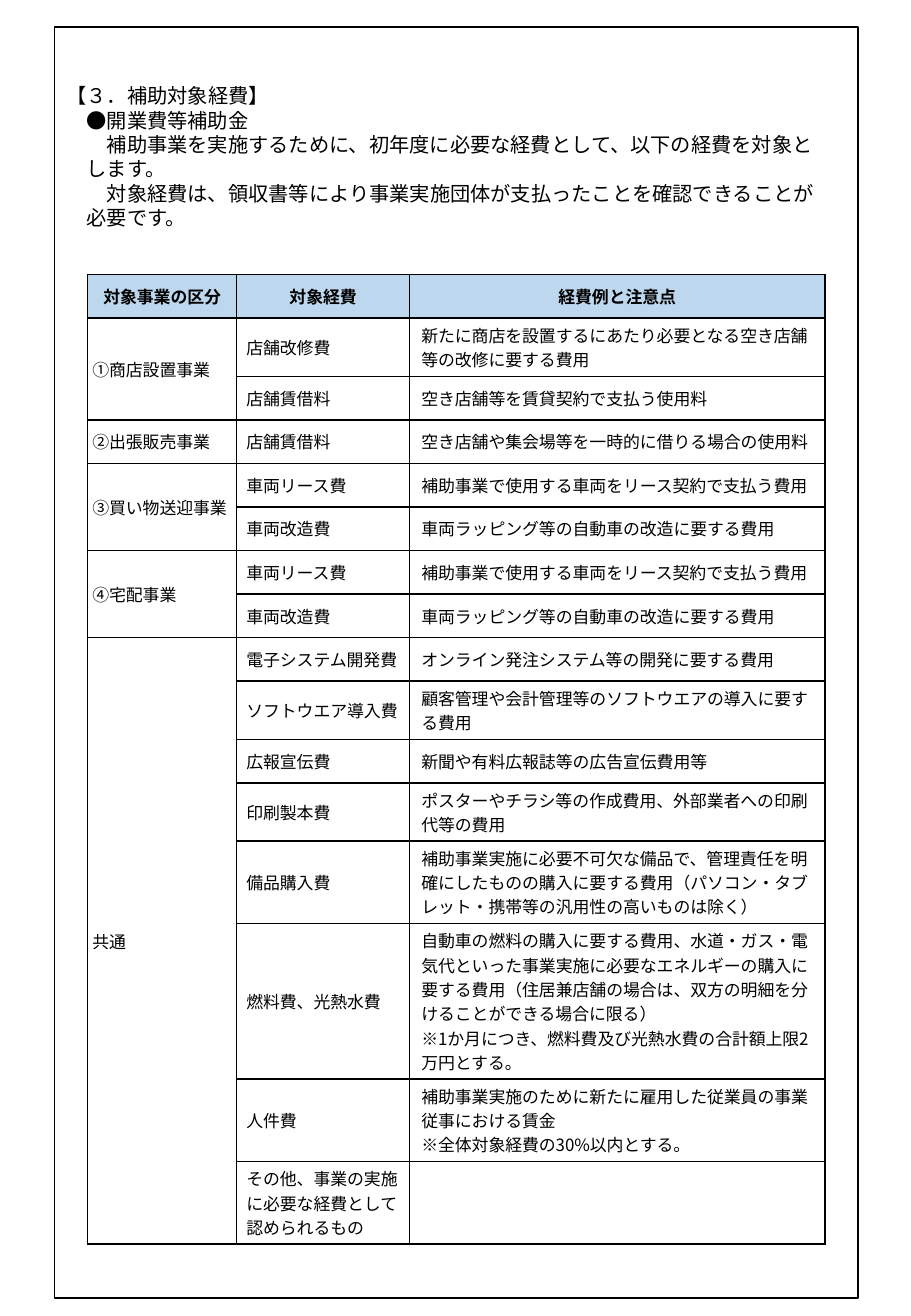
from lxml import etree
from pptx import Presentation
from pptx.dml.color import RGBColor
from pptx.enum.lang import MSO_LANGUAGE_ID
from pptx.enum.shapes import MSO_SHAPE
from pptx.enum.text import MSO_ANCHOR, MSO_AUTO_SIZE, PP_ALIGN
from pptx.oxml.ns import qn
from pptx.util import Cm, Pt

BLACK = RGBColor(0x00, 0x00, 0x00)
WHITE = RGBColor(0xFF, 0xFF, 0xFF)
HEADER_BLUE = RGBColor(0xBD, 0xD7, 0xEE)
FONT = "Noto Sans CJK JP"
LEFT, CENTER = PP_ALIGN.LEFT, PP_ALIGN.CENTER
TOP, MIDDLE = MSO_ANCHOR.TOP, MSO_ANCHOR.MIDDLE
NO_FIT = MSO_AUTO_SIZE.NONE
RECTANGLE = MSO_SHAPE.RECTANGLE
JAPANESE = MSO_LANGUAGE_ID.JAPANESE

TITLE = "【３．補助対象経費】"
INTRO = [
    "●開業費等補助金",
    "補助事業を実施するために、初年度に必要な経費として、以下の経費を対象とします。",
    "対象経費は、領収書等により事業実施団体が支払ったことを確認できることが必要です。",
]
HEADER = ["対象事業の区分", "対象経費", "経費例と注意点"]
LEASE = ("車両リース費", "補助事業で使用する車両をリース契約で支払う費用")
REMODEL = ("車両改造費", "車両ラッピング等の自動車の改造に要する費用")
# Each category holds its (expense, example) rows.
CATEGORIES = {
    "①商店設置事業": [
        ("店舗改修費", "新たに商店を設置するにあたり必要となる空き店舗等の改修に要する費用"),
        ("店舗賃借料", "空き店舗等を賃貸契約で支払う使用料"),
    ],
    "②出張販売事業": [
        ("店舗賃借料", "空き店舗や集会場等を一時的に借りる場合の使用料"),
    ],
    "③買い物送迎事業": [LEASE, REMODEL],
    "④宅配事業": [LEASE, REMODEL],
    "共通": [
        ("電子システム開発費", "オンライン発注システム等の開発に要する費用"),
        ("ソフトウエア導入費", "顧客管理や会計管理等のソフトウエアの導入に要する費用"),
        ("広報宣伝費", "新聞や有料広報誌等の広告宣伝費用等"),
        ("印刷製本費", "ポスターやチラシ等の作成費用、外部業者への印刷代等の費用"),
        ("備品購入費", "補助事業実施に必要不可欠な備品で、管理責任を明確にしたものの購入に"
                  "要する費用（パソコン・タブレット・携帯等の汎用性の高いものは除く）"),
        ("燃料費、光熱水費", "自動車の燃料の購入に要する費用、水道・ガス・電気代といった事業実施に"
                     "必要なエネルギーの購入に要する費用（住居兼店舗の場合は、双方の明細を"
                     "分けることができる場合に限る）\n"
                     "※1か月につき、燃料費及び光熱水費の合計額上限2万円とする。"),
        ("人件費", "補助事業実施のために新たに雇用した従業員の事業従事における賃金\n"
                "※全体対象経費の30%以内とする。"),
        ("その他、事業の実施に必要な経費として認められるもの", ""),
    ],
}
COLUMN_WIDTHS = [3.12, 3.61, 8.69]
ROW_HEIGHTS = [0.91, 1.07] + [0.91] * 7 + [1.07, 0.91, 1.07, 1.5, 2.79, 1.5, 1.5]
HEADER_MARGINS = (0.25, 0.25)
COLUMN_MARGINS = [(0.1, 0), (0.2, 0.2), (0.25, 0.25)]


def apply(target, values):
    for name, value in values.items():
        setattr(target, name, value)


class Sheet:
    """Holds the text style and the slide being filled."""

    def __init__(self, page):
        self.page = page

    def add_lines(self, text_frame, lines, size, bold=False, align=LEFT, spacing=None):
        for index, line in enumerate(lines):
            para = text_frame.add_paragraph() if index else text_frame.paragraphs[0]
            apply(para, {"alignment": align, "line_spacing": spacing})
            span = para.add_run()
            span.text = line
            apply(span.font, {"name": FONT, "size": Pt(size), "bold": bold,
                              "language_id": JAPANESE})
            span.font.color.rgb = BLACK
            latin = span._r.get_or_add_rPr().find(qn("a:latin"))
            latin.addnext(etree.Element(qn("a:ea"), typeface=FONT))

    def indent(self, para, left, first):
        properties = para._p.get_or_add_pPr()
        properties.set("marL", str(Pt(left)))
        properties.set("indent", str(Pt(first)))

    def frame(self, left, top, width, height, lines):
        box = self.page.shapes.add_shape(RECTANGLE, Cm(left), Cm(top), Cm(width), Cm(height))
        box.shadow.inherit = False
        box.fill.solid()
        box.fill.fore_color.rgb = WHITE
        box.line.color.rgb = BLACK
        box.line.width = Pt(1)
        text_frame = box.text_frame
        apply(text_frame, {"word_wrap": True, "vertical_anchor": TOP,
                           "margin_left": Cm(0.25), "margin_right": Cm(0.64),
                           "margin_top": Cm(1.7), "margin_bottom": 0})
        self.add_lines(text_frame, lines, 12, spacing=Pt(14.4))
        for index, para in enumerate(text_frame.paragraphs):
            self.indent(para, 12, 12 if index else 0)
        return box

    def title(self, left, top, width, height, text, behind):
        """Place the title just in front of the shape behind it."""
        title = self.page.shapes.title
        apply(title, {"left": Cm(left), "top": Cm(top),
                      "width": Cm(width), "height": Cm(height)})
        apply(title.text_frame, {"word_wrap": True, "auto_size": NO_FIT,
                                 "vertical_anchor": TOP, "margin_left": 0,
                                 "margin_right": 0, "margin_top": 0, "margin_bottom": 0})
        self.add_lines(title.text_frame, [text], 12, spacing=Pt(14.4))
        behind.element.addnext(title.element)

    def cell(self, cell, text, margins, fill=WHITE, bold=False, align=LEFT):
        left, right = margins
        apply(cell, {"vertical_anchor": MIDDLE, "margin_left": Cm(left),
                     "margin_right": Cm(right), "margin_top": Cm(0.1),
                     "margin_bottom": Cm(0.1)})
        cell.fill.solid()
        cell.fill.fore_color.rgb = fill
        self.add_lines(cell.text_frame, text.split("\n"), 10, bold, align)
        properties = cell._tc.get_or_add_tcPr()
        for index, side in enumerate(("lnL", "lnR", "lnT", "lnB")):
            border = etree.Element(qn("a:" + side), w=str(Pt(1)))
            solid = etree.SubElement(border, qn("a:solidFill"))
            etree.SubElement(solid, qn("a:srgbClr"), val=str(BLACK))
            properties.insert(index, border)

    def table(self, left, top, header, categories):
        table = self.page.shapes.add_table(
            len(ROW_HEIGHTS), len(COLUMN_WIDTHS), Cm(left), Cm(top),
            Cm(sum(COLUMN_WIDTHS)), Cm(sum(ROW_HEIGHTS))).table
        apply(table, {"first_row": False, "horz_banding": False})
        for column, width in zip(table.columns, COLUMN_WIDTHS):
            column.width = Cm(width)
        for row, height in zip(table.rows, ROW_HEIGHTS):
            row.height = Cm(height)
        for column, text in enumerate(header):
            self.cell(table.cell(0, column), text, HEADER_MARGINS, HEADER_BLUE, True, CENTER)
        row = 1
        for category, expenses in categories.items():
            first = row
            for expense, example in expenses:
                texts = (category if row == first else "", expense, example)
                for column, text in enumerate(texts):
                    self.cell(table.cell(row, column), text, COLUMN_MARGINS[column])
                row += 1
            if len(expenses) > 1:
                table.cell(first, 0).merge(table.cell(row - 1, 0))


def main():
    deck = Presentation()
    apply(deck, {"slide_width": Cm(19.05), "slide_height": Cm(27.51)})
    sheet = Sheet(deck.slides.add_slide(deck.slide_layouts[5]))
    frame = sheet.frame(1.14, 0.56, 16.81, 26.57, INTRO)
    sheet.title(1.39, 1.75, 15.9, 0.51, TITLE, frame)
    sheet.table(1.83, 5.74, HEADER, CATEGORIES)
    deck.save("out.pptx")


if __name__ == "__main__":
    main()
